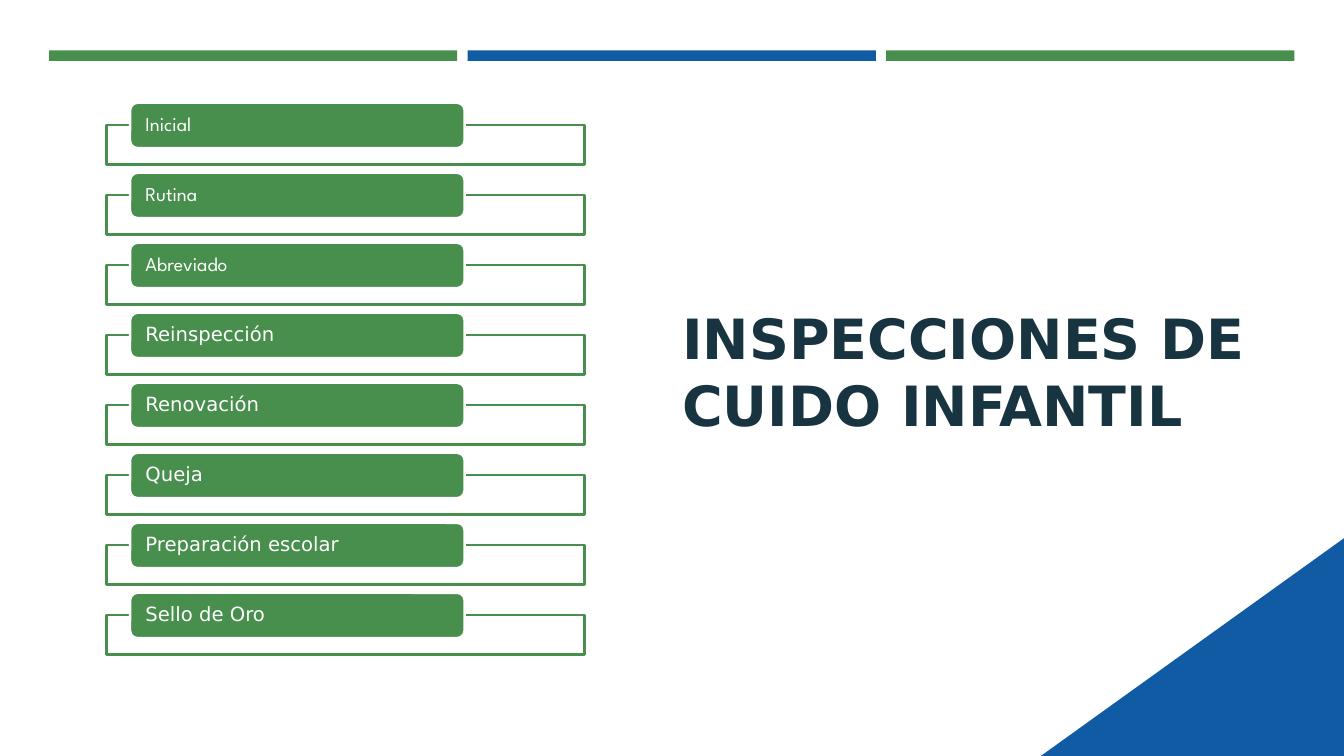
import pptx
import pptx.util
import pptx.dml.color
import pptx.enum.shapes
import pptx.enum.text

Pt = pptx.util.Pt
RGB = pptx.dml.color.RGBColor
KIND = pptx.enum.shapes.MSO_SHAPE
ALIGN = pptx.enum.text.PP_ALIGN
ANCHOR = pptx.enum.text.MSO_ANCHOR

# Content
TITLE = "INSPECCIONES DE CUIDO INFANTIL"
SANS, SPARTAN = "DejaVu Sans", "League Spartan"
ITEMS = [
    ("Inicial", SPARTAN),
    ("Rutina", SPARTAN),
    ("Abreviado", SPARTAN),
    ("Reinspección", SANS),
    ("Renovación", SANS),
    ("Queja", SANS),
    ("Preparación escolar", SANS),
    ("Sello de Oro", SANS),
]

# Colours
GREEN = RGB(0x48, 0x8F, 0x4D)
BLUE = RGB(0x11, 0x5B, 0xA4)
NAVY = RGB(0x19, 0x34, 0x41)
WHITE = RGB(0xFF, 0xFF, 0xFF)

# Sizes in points
WIDE, HIGH = 960, 540
BAR_X, BAR_Y, BAR_W, BAR_H, BAR_STEP = 35, 36, 291.6, 7.5, 299
ROW_Y, ROW_STEP = 73.4, 50
FRAME_X, FRAME_DY, FRAME_W, FRAME_H = 76.2, 16, 341.3, 28
LABEL_X, LABEL_W, LABEL_H = 92.9, 239, 32.4

deck = pptx.Presentation()
deck.slide_width, deck.slide_height = Pt(WIDE), Pt(HIGH)
slide = deck.slides.add_slide(deck.slide_layouts[5])


def paint(shape, fill, line=None):
    shape.shadow.inherit = False
    shape.fill.solid()
    shape.fill.fore_color.rgb = fill
    if line is None:
        shape.line.fill.background()
    else:
        shape.line.color.rgb = line
        shape.line.width = Pt(1.75)


def block(kind, x, y, w, h, fill, line=None):
    shape = slide.shapes.add_shape(kind, Pt(x), Pt(y), Pt(w), Pt(h))
    paint(shape, fill, line)
    return shape


def write(frame, text, font, size, color, bold=False):
    para = frame.paragraphs[0]
    para.alignment = ALIGN.LEFT
    run = para.add_run()
    run.text = text
    run.font.name = font
    run.font.size = Pt(size)
    run.font.bold = bold
    run.font.color.rgb = color
    return para


# Top bars
for i, color in enumerate((GREEN, BLUE, GREEN)):
    block(KIND.RECTANGLE, BAR_X + i * BAR_STEP, BAR_Y, BAR_W, BAR_H, color)

# Corner triangle
pen = slide.shapes.build_freeform(Pt(743.5), Pt(HIGH))
pen.add_line_segments([(Pt(WIDE), Pt(384.5)), (Pt(WIDE), Pt(HIGH))], close=True)
paint(pen.convert_to_shape(), BLUE)

# Title
title = slide.shapes.title
title.left, title.top = Pt(480.2), Pt(210.2)
title.width, title.height = Pt(417), Pt(120.4)
frame = title.text_frame
frame.word_wrap = True
frame.auto_size = pptx.enum.text.MSO_AUTO_SIZE.NONE
frame.vertical_anchor = ANCHOR.TOP
frame.margin_left = frame.margin_right = frame.margin_top = Pt(7.2)
write(frame, TITLE, SANS, 39.6, NAVY, True)

# Inspection list
for i, (name, font) in enumerate(ITEMS):
    y = ROW_Y + i * ROW_STEP
    block(KIND.RECTANGLE, FRAME_X, y + FRAME_DY, FRAME_W, FRAME_H, WHITE, GREEN)
    label = block(KIND.ROUNDED_RECTANGLE, LABEL_X, y, LABEL_W, LABEL_H, GREEN, WHITE)
    frame = label.text_frame
    frame.word_wrap = True
    frame.vertical_anchor = ANCHOR.MIDDLE
    frame.margin_left = frame.margin_right = Pt(9.4)
    frame.margin_top = frame.margin_bottom = 0
    write(frame, name, font, 14, WHITE).line_spacing = 0.9

deck.save("out.pptx")
